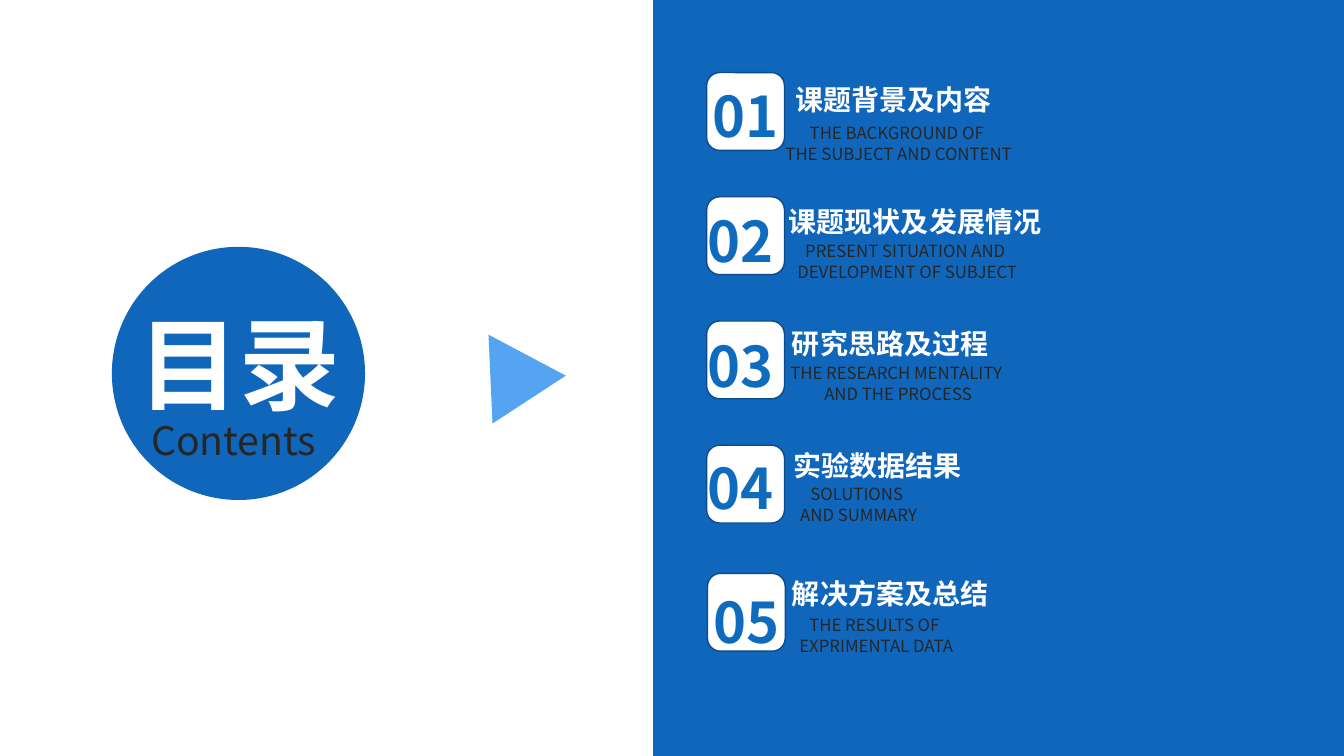
from lxml.etree import SubElement
from pptx import Presentation
from pptx.dml.color import RGBColor
from pptx.enum.shapes import MSO_SHAPE as Shape
from pptx.enum.text import MSO_ANCHOR as Anchor, MSO_AUTO_SIZE as AutoSize, PP_ALIGN as Align
from pptx.oxml.ns import qn
from pptx.util import Cm, Pt

BLUE = "0F66BB"
NUMBER_BLUE = "0F6BBE"
LIGHT_BLUE = "54A4F1"
EDGE_BLUE = "0B4B8A"
WHITE = "FFFFFF"
DARK = "262626"

CARD_SIZE = 1.96

# card, number: left, top; heading, caption: left, top, width
ENTRIES = [
    dict(card=(17.81, 1.83), number=(17.7, 1.85),
         heading=(19.79, 1.93, 5.51), title="课题背景及内容",
         caption=(19.41, 2.95, 6.48), lines=["THE BACKGROUND OF ", "THE SUBJECT AND CONTENT"]),
    dict(card=(17.81, 4.96), number=(17.58, 5),
         heading=(19.63, 5, 6.93), title="课题现状及发展情况",
         caption=(19.74, 5.92, 6.25), lines=["PRESENT SITUATION AND ", "DEVELOPMENT OF SUBJECT"]),
    dict(card=(17.81, 8.09), number=(17.58, 8.15),
         heading=(19.71, 8.08, 5.51), title="研究思路及过程",
         caption=(19.51, 8.99, 6.25), lines=["THE RESEARCH MENTALITY ", "AND THE PROCESS"]),
    dict(card=(17.81, 11.22), number=(17.58, 11.23),
         heading=(19.74, 11.15, 4.78), title="实验数据结果",
         caption=(19.71, 12.04, 3.86), lines=["SOLUTIONS ", "AND SUMMARY"]),
    dict(card=(17.83, 14.45), number=(17.73, 14.61),
         heading=(19.71, 14.38, 5.51), title="解决方案及总结",
         caption=(19.76, 15.34, 4.65), lines=["THE RESULTS OF ", "EXPRIMENTAL DATA"]),
]


def color(hex_code):
    return RGBColor.from_string(hex_code)


class SlideBuilder:
    """Holds the text style and the page being drawn; lengths are centimetres."""

    font = "Noto Sans CJK SC"
    line_height = 1.25

    def __init__(self, page):
        self.page = page

    def shape(self, kind, left, top, width, height, fill, line=None, rotation=0):
        shape = self.page.shapes.add_shape(kind, Cm(left), Cm(top), Cm(width), Cm(height))
        shape.shadow.inherit = False
        shape.rotation = rotation
        shape.fill.solid()
        shape.fill.fore_color.rgb = color(fill)
        if line:
            shape.line.color.rgb = color(line)
            shape.line.width = Pt(1)
        else:
            shape.line.fill.background()
        return shape

    def fill_text(self, box, lines, size, ink, bold=False, align=Align.LEFT, wrap=True):
        """Fill a box with one formatted paragraph per line."""
        frame = box.text_frame
        frame.word_wrap = wrap
        frame.auto_size = AutoSize.SHAPE_TO_FIT_TEXT
        frame.vertical_anchor = Anchor.TOP
        frame.text = "\n".join(lines)
        for para in frame.paragraphs:
            para.alignment = align
            para.line_spacing = Pt(size * self.line_height)
            para.space_before = Pt(0)
            for span in para.runs:
                span.font.size = Pt(size)
                span.font.bold = bold
                span.font.color.rgb = color(ink)
                span.font.name = self.font
                SubElement(span._r.get_or_add_rPr(), qn("a:ea"), typeface=self.font)

    def text(self, lines, left, top, width, height, **style):
        box = self.page.shapes.add_textbox(Cm(left), Cm(top), Cm(width), Cm(height))
        self.fill_text(box, lines, **style)

    def title(self, words, left, top, width, height, above, **style):
        """Format the title placeholder and stack it just above a shape."""
        box = self.page.shapes.title
        box.left, box.top, box.width, box.height = Cm(left), Cm(top), Cm(width), Cm(height)
        self.fill_text(box, [words], **style)
        above.element.addnext(box.element)


def main():
    deck = Presentation()
    deck.slide_width, deck.slide_height = Cm(33.87), Cm(19.05)
    builder = SlideBuilder(deck.slides.add_slide(deck.slide_layouts[5]))

    builder.shape(Shape.RECTANGLE, 16.46, 0, 17.41, 19.05, BLUE)
    circle = builder.shape(Shape.OVAL, 2.82, 6.22, 6.38, 6.38, BLUE)
    builder.title("目录", 3.23, 7.34, 5.62, 3.33, circle, size=72, ink=WHITE, bold=True)
    builder.shape(Shape.ISOSCELES_TRIANGLE, 12.19, 8.56, 2.24, 1.9, LIGHT_BLUE, rotation=87.4)
    builder.text(["Contents"], 3.56, 10.31, 4.93, 1.45, size=28, ink=DARK)

    for index, entry in enumerate(ENTRIES, start=1):
        builder.shape(Shape.ROUNDED_RECTANGLE, *entry["card"], CARD_SIZE, CARD_SIZE,
                      WHITE, line=EDGE_BLUE)
        builder.text([entry["title"]], *entry["heading"], 1.12,
                     size=20, ink=WHITE, bold=True, wrap=False)
        builder.text(entry["lines"], *entry["caption"], 1.27,
                     size=12, ink=DARK, align=Align.CENTER, wrap=False)
        builder.text([f"{index:02}"], *entry["number"], 2.39, 1.96,
                     size=40, ink=NUMBER_BLUE, bold=True)

    deck.save("out.pptx")


if __name__ == "__main__":
    main()
